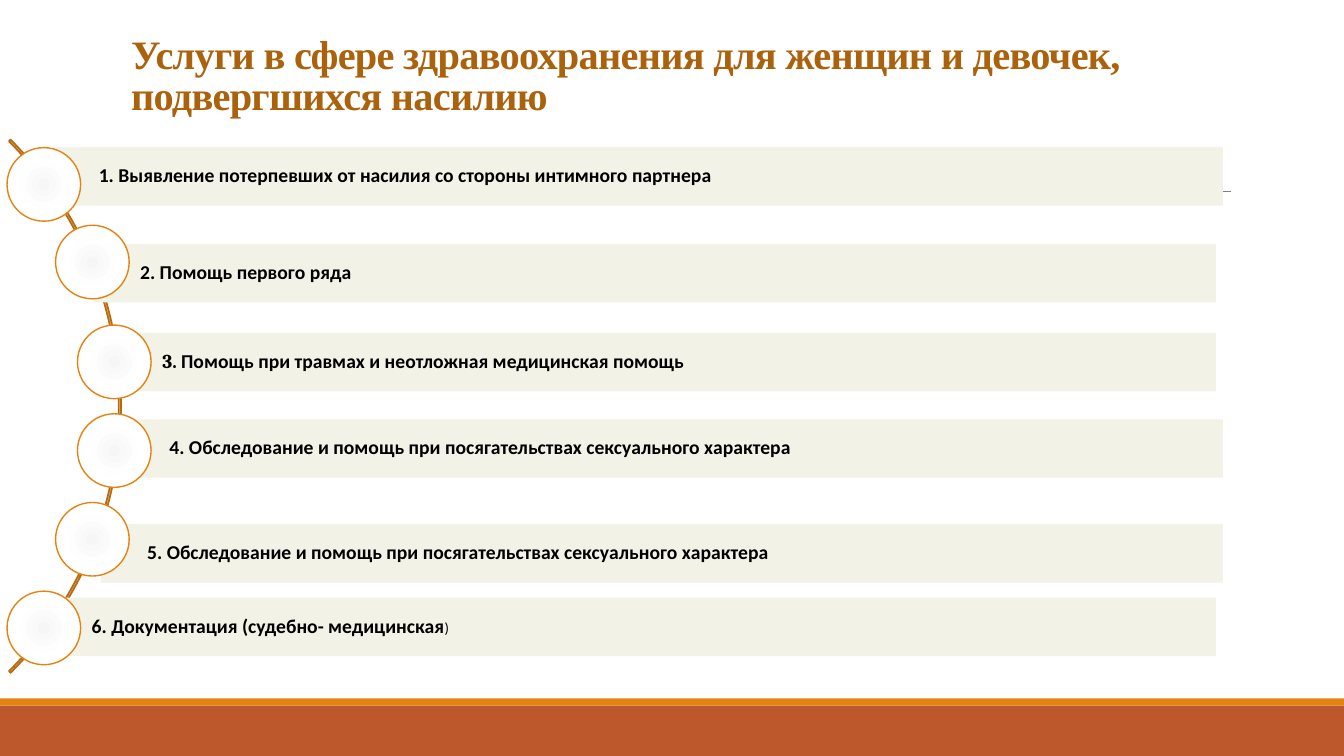
from math import sqrt

from lxml.etree import SubElement
from pptx import Presentation
from pptx.dml.color import RGBColor
from pptx.enum.shapes import MSO_CONNECTOR, MSO_SHAPE
from pptx.enum.text import MSO_ANCHOR, PP_ALIGN
from pptx.oxml.ns import qn
from pptx.util import Inches, Pt

TITLE = "Услуги в сфере здравоохранения для женщин и девочек, подвергшихся насилию"
BODY = {"font": "Calibri", "size": 14, "bold": True}
# Each service: left, top and right edge of its bar, circle nudge, text runs
SERVICES = [
    (0.52, 1.46, 12.13, 0,
     [("1. Выявление потерпевших от насилия со стороны интимного партнера", {})]),
    (0.93, 2.42, 12.06, -0.11, [("2. Помощь первого ряда", {})]),
    (1.15, 3.30, 12.06, 0,
     [("3. ", {"font": "Cambria"}),
      ("Помощь при травмах и неотложная медицинская помощь", {})]),
    (1.22, 4.16, 12.13, 0,
     [("4. Обследование и помощь при посягательствах сексуального характера", {})]),
    (1.00, 5.20, 12.13, 0,
     [("5. Обследование и помощь при посягательствах сексуального характера", {})]),
    (0.45, 5.93, 12.06, 0,
     [("6. Документация (судебно- медицинская", {}),
      (")", {"size": 10.5, "bold": False})]),
]
COLORS = {
    "band": "BD582C", "accent": "E48312", "rule": "808080", "title": "AB620D",
    "arc": "B7690E", "bar": "F3F2E6", "text": "000000",
}
CIRCLE_STOPS = [(0, "F6F6F6"), (45, "FEFEFE"), (100, "FFFFFF")]

WIDTH, HEIGHT = 13.33, 7.5
BAND_TOP = 7.0
ARC_X, ARC_Y, ARC_RADIUS = -2.54, 4.03, 3.74
CIRCLE_TRACK = 3.7
CIRCLE_SIZE, CIRCLE_PITCH = 0.73, 0.88
BAR_HEIGHT = 0.58


def color(name):
    return RGBColor.from_string(COLORS[name])


def add_shape(slide, kind, left, top, width, height, fill=None, line=None, line_width=1):
    shape = slide.shapes.add_shape(
        kind, Inches(left), Inches(top), Inches(width), Inches(height))
    shape.shadow.inherit = False
    if fill:
        shape.fill.solid()
        shape.fill.fore_color.rgb = color(fill)
    else:
        shape.fill.background()
    if line:
        shape.line.color.rgb = color(line)
        shape.line.width = Pt(line_width)
    else:
        shape.line.fill.background()
    return shape


def add_run(paragraph, text, font, size, bold, fill="text"):
    run = paragraph.add_run()
    run.text = text
    run.font.name = font
    run.font.size = Pt(size)
    run.font.bold = bold
    run.font.color.rgb = color(fill)
    return run


def set_frame(frame, anchor, left, top, right, bottom):
    """Set wrapping, anchor and insets in inches."""
    frame.word_wrap = True
    frame.vertical_anchor = anchor
    frame.margin_left, frame.margin_top = Inches(left), Inches(top)
    frame.margin_right, frame.margin_bottom = Inches(right), Inches(bottom)


def set_radial_fill(shape, stops):
    properties = shape.fill._xPr
    properties.remove(properties.find(qn("a:noFill")))
    gradient = SubElement(properties, qn("a:gradFill"), rotWithShape="1")
    properties.insert(2, gradient)
    stop_list = SubElement(gradient, qn("a:gsLst"))
    for position, value in stops:
        stop = SubElement(stop_list, qn("a:gs"), pos=str(position * 1000))
        SubElement(stop, qn("a:srgbClr"), val=value)
    radial = SubElement(gradient, qn("a:path"))
    radial.set("path", "circle")
    SubElement(radial, qn("a:fillToRect"), l="100000", t="100000", r="100000", b="100000")


def add_background(slide):
    add_shape(slide, MSO_SHAPE.RECTANGLE, 0, BAND_TOP, WIDTH, HEIGHT - BAND_TOP, "band")
    add_shape(slide, MSO_SHAPE.RECTANGLE, 0, BAND_TOP - 0.07, WIDTH, 0.07, "accent")
    rule = slide.shapes.add_connector(
        MSO_CONNECTOR.STRAIGHT, Inches(1.31), Inches(1.9), Inches(12.21), Inches(1.9))
    rule.line.color.rgb = color("rule")
    rule.line.width = Pt(0.5)
    SubElement(rule.line._get_or_add_ln().getparent(), qn("a:effectLst"))


def add_title(slide):
    title = slide.shapes.title
    title.left, title.top = Inches(1.2), Inches(0.31)
    title.width, title.height = Inches(11), Inches(1.59)
    set_frame(title.text_frame, MSO_ANCHOR.BOTTOM, 0.1, 0.05, 0.1, 0.72)
    paragraph = title.text_frame.paragraphs[0]
    paragraph.alignment = PP_ALIGN.LEFT
    paragraph.line_spacing = 0.85
    run = add_run(paragraph, TITLE, "Times New Roman", 28.8, True, "title")
    run.font._element.set("spc", "-50")


def add_services(slide):
    arc = add_shape(slide, MSO_SHAPE.BLOCK_ARC, ARC_X - ARC_RADIUS, ARC_Y - ARC_RADIUS,
                    2 * ARC_RADIUS, 2 * ARC_RADIUS, line="arc", line_width=1.25)
    for index, value in enumerate((189, 27, 0.003)):
        arc.adjustments[index] = value

    for index, (left, top, right, nudge, runs) in enumerate(SERVICES):
        bar = add_shape(slide, MSO_SHAPE.RECTANGLE, left, top, right - left, BAR_HEIGHT, "bar")
        set_frame(bar.text_frame, MSO_ANCHOR.MIDDLE, 0.46, 0.04, 0.04, 0.04)
        paragraph = bar.text_frame.paragraphs[0]
        paragraph.alignment = PP_ALIGN.LEFT
        paragraph.line_spacing = 0.9
        for text, changes in runs:
            add_run(paragraph, text, **{**BODY, **changes})

        # Circle centres are evenly spaced down and lie on the arc
        offset = (index - (len(SERVICES) - 1) / 2) * CIRCLE_PITCH
        center_x = ARC_X + sqrt(CIRCLE_TRACK ** 2 - offset ** 2)
        circle = add_shape(slide, MSO_SHAPE.OVAL, center_x - CIRCLE_SIZE / 2,
                           ARC_Y + offset + nudge - CIRCLE_SIZE / 2,
                           CIRCLE_SIZE, CIRCLE_SIZE, line="accent")
        set_radial_fill(circle, CIRCLE_STOPS)


def main():
    presentation = Presentation()
    presentation.slide_width, presentation.slide_height = Inches(WIDTH), Inches(HEIGHT)
    slide = presentation.slides.add_slide(presentation.slide_layouts[5])
    add_background(slide)
    add_title(slide)
    add_services(slide)
    presentation.save("out.pptx")


if __name__ == "__main__":
    main()
